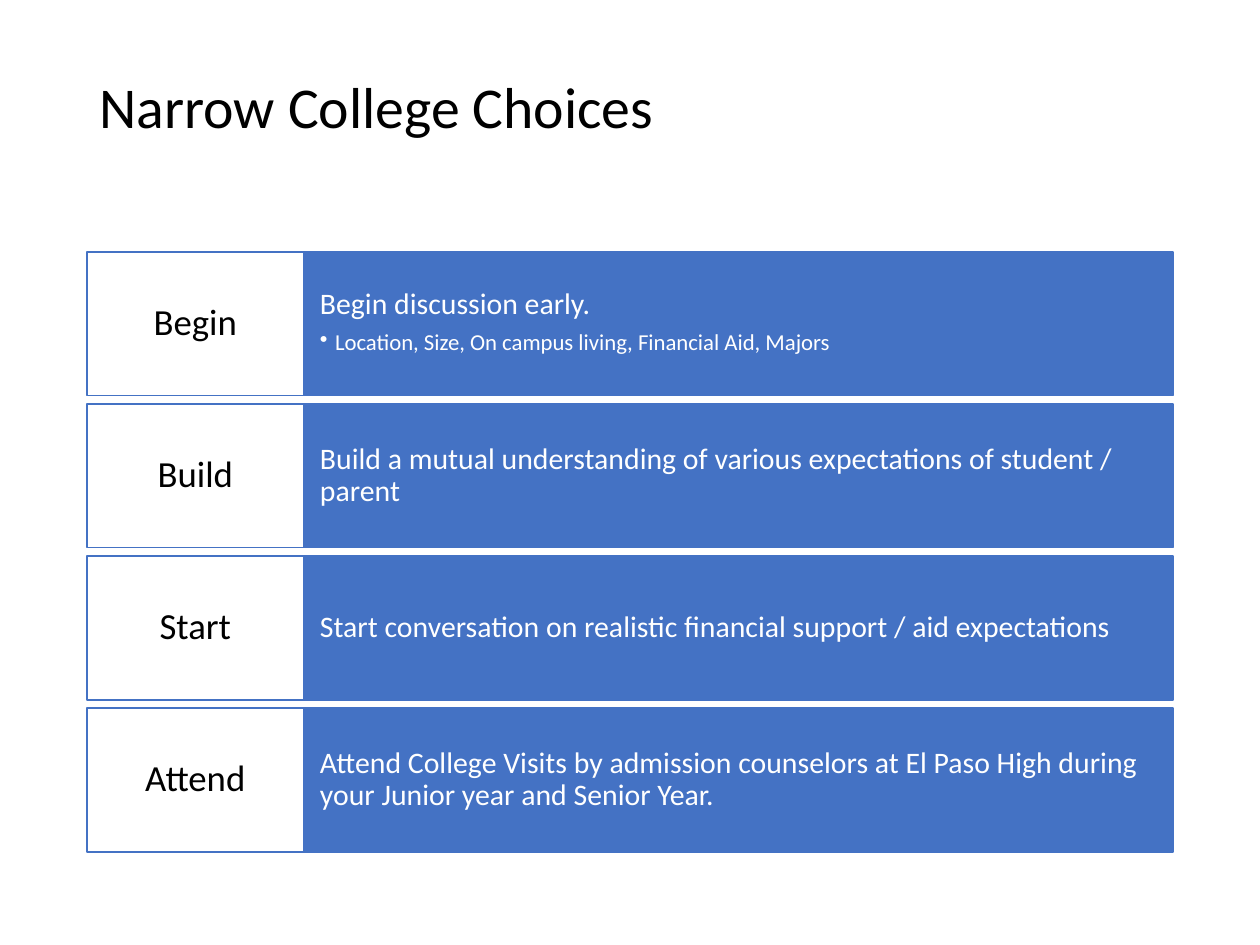
from lxml.etree import SubElement
from pptx import Presentation
from pptx.dml.color import RGBColor
from pptx.enum.shapes import MSO_SHAPE
from pptx.enum.text import MSO_ANCHOR, PP_ALIGN
from pptx.oxml.ns import qn
from pptx.util import Inches, Pt

BLUE, WHITE, BLACK = "4472C4", "FFFFFF", "000000"
LEFT, LABEL_WIDTH, ADVICE_WIDTH = 0.69, 1.72, 6.9
TOP, BOTTOM, ROW_HEIGHT = 2, 6.76, 1.14

STEPS = [
    ("Begin", "Begin discussion early.",
     "Location, Size, On campus living, Financial Aid, Majors"),
    ("Build", "Build a mutual understanding of various expectations of student / parent", None),
    ("Start", "Start conversation on realistic financial support / aid expectations", None),
    ("Attend", "Attend College Visits by admission counselors at El Paso High "
     "during your Junior year and Senior Year.", None),
]


def rgb(value):
    return RGBColor.from_string(value)


def set_frame(frame, margin_x, margin_top, margin_bottom, anchor=MSO_ANCHOR.MIDDLE):
    settings = {
        "word_wrap": True,
        "vertical_anchor": anchor,
        "margin_left": Inches(margin_x),
        "margin_right": Inches(margin_x),
        "margin_top": Inches(margin_top),
        "margin_bottom": Inches(margin_bottom),
    }
    for name, value in settings.items():
        setattr(frame, name, value)


def write(paragraph, text, size, color, align=PP_ALIGN.LEFT, after=0):
    layout = {"alignment": align, "line_spacing": 0.9, "space_after": Pt(after)}
    for name, value in layout.items():
        setattr(paragraph, name, value)
    run = paragraph.add_run()
    run.text = text
    for name, value in {"name": "Calibri", "size": Pt(size)}.items():
        setattr(run.font, name, value)
    run.font.color.rgb = rgb(color)


def add_bullet(paragraph, indent):
    properties = paragraph._p.get_or_add_pPr()
    properties.set("marL", str(Inches(indent)))
    properties.set("indent", str(Inches(-indent)))
    SubElement(properties, qn("a:buChar")).set("char", "•")


def add_title(slide, text):
    title = slide.shapes.add_textbox(Inches(LEFT), Inches(0.4), Inches(8.62), Inches(1.45))
    set_frame(title.text_frame, 0.1, 0.05, 0.55)
    write(title.text_frame.paragraphs[0], text, 33, BLACK)


def add_box(slide, left, top, width, fill):
    box = slide.shapes.add_shape(MSO_SHAPE.RECTANGLE, Inches(left), Inches(top),
                                 Inches(width), Inches(ROW_HEIGHT))
    box.shadow.inherit = False
    box.fill.solid()
    box.fill.fore_color.rgb = rgb(fill)
    box.line.color.rgb = rgb(BLUE)
    box.line.width = Pt(1)
    return box.text_frame


def add_step(slide, top, verb, advice, topics):
    advice_frame = add_box(slide, LEFT + LABEL_WIDTH, top, ADVICE_WIDTH, BLUE)
    set_frame(advice_frame, 0.13, 0.29, 0.29,
              MSO_ANCHOR.TOP if topics else MSO_ANCHOR.MIDDLE)
    write(advice_frame.paragraphs[0], advice, 17, WHITE, after=6)
    if topics:
        topic_line = advice_frame.add_paragraph()
        write(topic_line, topics, 13, WHITE, after=2)
        add_bullet(topic_line, 0.12)

    verb_frame = add_box(slide, LEFT, top, LABEL_WIDTH, WHITE)
    set_frame(verb_frame, 0.09, 0.11, 0.11)
    write(verb_frame.paragraphs[0], verb, 21, BLACK, PP_ALIGN.CENTER, after=7)


def main():
    presentation = Presentation()
    presentation.slide_width, presentation.slide_height = Inches(10), Inches(7.5)
    slide = presentation.slides.add_slide(presentation.slide_layouts[6])
    add_title(slide, "Narrow College Choices")
    pitch = (BOTTOM - TOP - ROW_HEIGHT) / (len(STEPS) - 1)
    for row, step in enumerate(STEPS):
        add_step(slide, TOP + row * pitch, *step)
    presentation.save("out.pptx")


if __name__ == "__main__":
    main()
